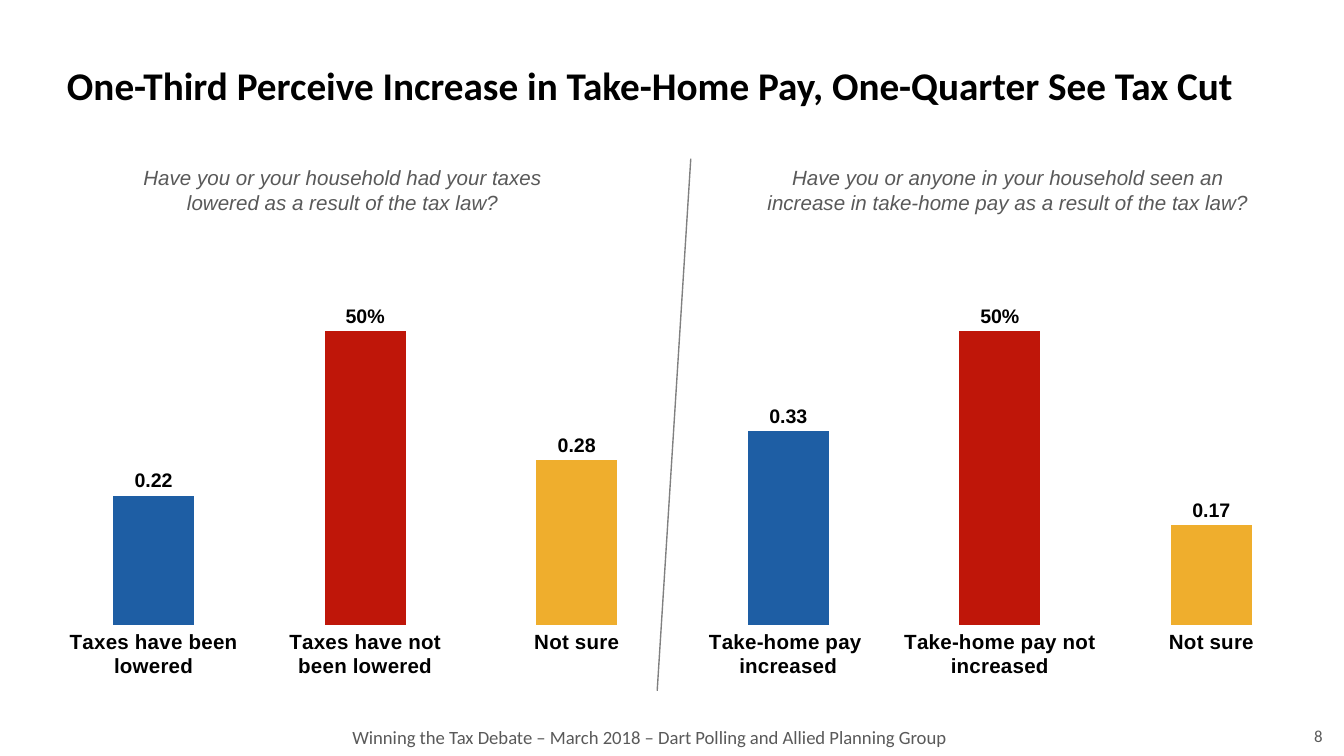
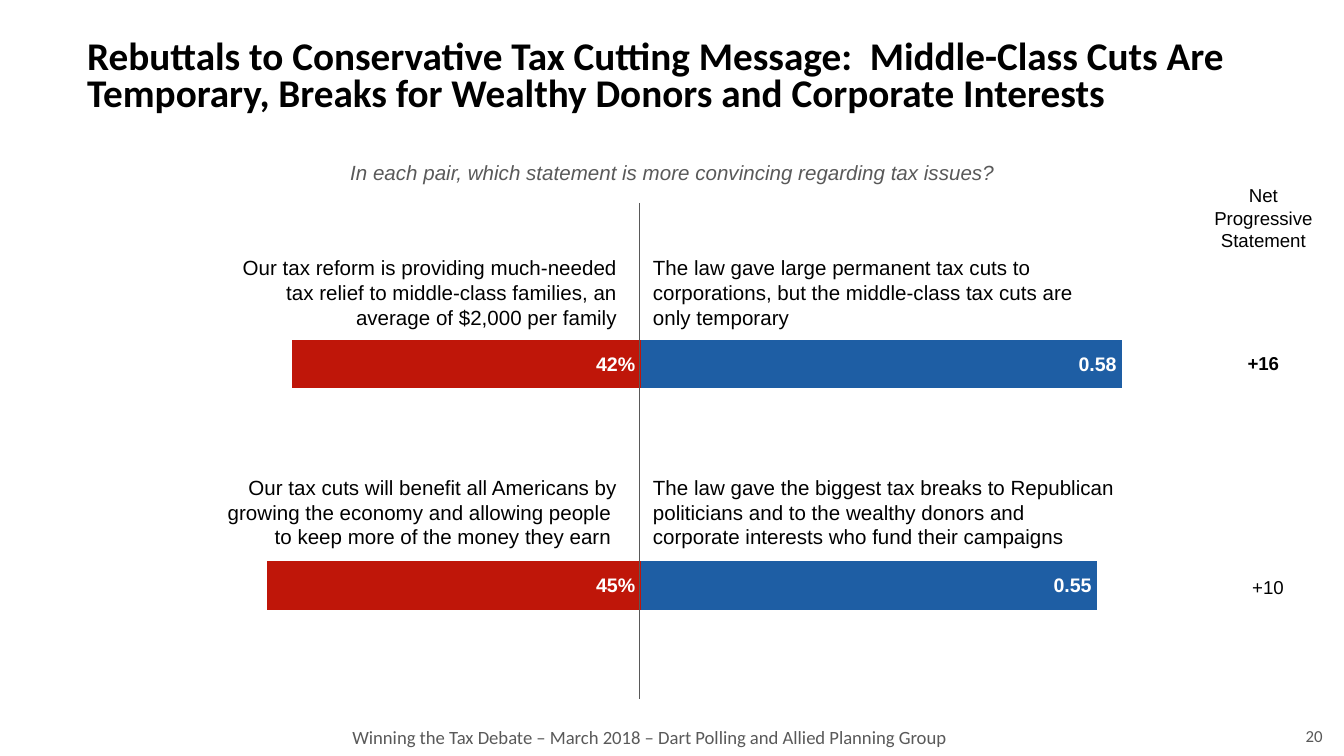
from copy import deepcopy

from pptx import Presentation
from pptx import util as u
from pptx.chart.data import CategoryChartData
from pptx.dml.color import RGBColor
from pptx.enum import chart as charts, shapes, text
from pptx.oxml import parse_xml
from pptx.oxml.ns import nsdecls, qn

BLACK, WHITE, GRAY, MID_GRAY = "000000", "FFFFFF", "595959", "808080"
BLUE, RED, GOLD = "1E5EA4", "BF1609", "EFAE2D"
LEFT, CENTER, RIGHT = text.PP_ALIGN.LEFT, text.PP_ALIGN.CENTER, text.PP_ALIGN.RIGHT
FOOTER = "Winning the Tax Debate – March 2018 – Dart Polling and Allied Planning Group"
NO_LEADERS = (
    f'<c:extLst {nsdecls("c")}><c:ext uri="{{CE6537A1-D6FC-4f65-9D91-7224C49458BB}}" '
    'xmlns:c15="http://schemas.microsoft.com/office/drawing/2012/chart">'
    '<c15:showLeaderLines val="0"/></c:ext></c:extLst>')


def rgb(color):
    return RGBColor.from_string(color)


def set_font(font, size, color=BLACK, name="Arial", bold=False, italic=False):
    font.name, font.size, font.bold, font.italic = name, u.Pt(size), bold, italic
    font.color.rgb = rgb(color)


def write(paragraph, words, align=LEFT, spacing=None, before=None, indent=None, **style):
    paragraph.alignment = align
    if spacing:
        paragraph.line_spacing = spacing
    if before:
        paragraph.space_before = u.Pt(before)
    if indent:
        paragraph._p.get_or_add_pPr().set("marL", str(u.Inches(indent)))
    for index, line in enumerate(words.split("\n")):
        if index:
            paragraph.add_line_break()
        run = paragraph.add_run()
        run.text = line
        set_font(run.font, **style)
    for line_break in paragraph._p.findall(qn("a:br")):
        line_break.append(deepcopy(run._r.rPr))


def manual_layout(x, y, w=None, h=None):
    parts = [("x", x), ("y", y)]
    if w:
        parts = [("layoutTarget", "inner"), ("xMode", "edge"), ("yMode", "edge"), *parts, ("w", w), ("h", h)]
    body = "".join(f'<c:{tag} val="{value}"/>' for tag, value in parts)
    return parse_xml(f'<c:layout {nsdecls("c")}><c:manualLayout>{body}</c:manualLayout></c:layout>')


class Deck:
    def __init__(self):
        self.show = Presentation()
        self.show.slide_width = u.Inches(10)
        self.show.slide_height = u.Inches(10) * 9 // 16
        self.slide = None

    def page(self, title, title_area, number):
        self.slide = self.show.slides.add_slide(self.show.slide_layouts[6])
        self.text((1.84, 5.35, 5.98, 0.27), [FOOTER], align=CENTER, size=10, color=GRAY, name="Calibri")
        self.text(title_area, [title], anchor=text.MSO_ANCHOR.MIDDLE, spacing=0.8,
                  size=21, name="Calibri", bold=True)
        self.text((9.3, 5.35, 0.64, 0.25), [number], align=RIGHT, size=9, color=GRAY, name="Calibri")

    def text(self, area, paragraphs, anchor=text.MSO_ANCHOR.TOP, wrap=True, **style):
        frame = self.slide.shapes.add_textbox(*map(u.Inches, area)).text_frame
        frame.word_wrap = wrap
        frame.vertical_anchor = anchor
        for index, entry in enumerate(paragraphs):
            words, extra = entry if isinstance(entry, tuple) else (entry, {})
            paragraph = frame.add_paragraph() if index else frame.paragraphs[0]
            write(paragraph, words, **{**style, **extra})

    def question(self, area, words):
        self.text(area, [words], align=CENTER, size=11, color=GRAY, italic=True)

    def line(self, start, end, color):
        divider = self.slide.shapes.add_connector(
            shapes.MSO_CONNECTOR.STRAIGHT, *map(u.Inches, (*start, *end)))
        divider.line.color.rgb = rgb(color)
        divider.line.width = u.Pt(0.75)
        divider._element.spPr.append(parse_xml(f'<a:effectLst {nsdecls("a")}/>'))

    def chart(self, kind, area, categories, series, plot_area, limits, gap, label_color):
        data = CategoryChartData()
        data.categories = categories
        for index, (values, *_) in enumerate(series, 1):
            data.add_series(f"Series {index}", values)
        chart = self.slide.shapes.add_chart(kind, *map(u.Inches, area), data).chart
        chart.has_legend = chart.has_title = False
        set_font(chart.font, 18)
        plot_xml = chart._chartSpace.chart.plotArea
        for layout in plot_xml.findall(qn("c:layout")):
            plot_xml.remove(layout)
        plot_xml.insert(0, manual_layout(*plot_area))
        scale = chart.value_axis
        scale.minimum_scale, scale.maximum_scale = limits
        scale.has_major_gridlines = scale.visible = False
        plot = chart.plots[0]
        plot.gap_width, plot.overlap, plot.vary_by_categories = gap, 100, False
        for bars, (_, color, number_format, position) in zip(plot.series, series):
            bars.format.fill.solid()
            bars.format.fill.fore_color.rgb = rgb(color)
            bars.invert_if_negative = False
            labels = bars.data_labels
            labels.show_value = True
            labels.number_format, labels.number_format_is_linked = number_format, False
            labels.position = position
            set_font(labels.font, 10.5, label_color, bold=True)
        return chart

    def raise_labels(self, chart, series, plot_height, top):
        for bars, (values, _, number_format, position) in zip(chart.plots[0].series, series):
            for index, value in enumerate(values):
                if value is None:
                    continue
                label = bars.points[index].data_label
                set_font(label.font, 10.5, bold=True)
                label.position = position
                shift = round(-value / top * plot_height / 2 - 0.03, 3)
                label_xml = bars._element.xpath(f"c:dLbls/c:dLbl[c:idx/@val={index}]")[0]
                label_xml.insert(1, manual_layout(0, shift))
                label_xml.insert(2, parse_xml(
                    f'<c:numFmt {nsdecls("c")} formatCode="{number_format}" sourceLinked="0"/>'))
            labels_xml = bars._element.find(qn("c:dLbls"))
            for leaders in labels_xml.findall(qn("c:showLeaderLines")):
                leaders.set("val", "0")
            labels_xml.append(parse_xml(NO_LEADERS))


def perceptions(deck):
    deck.page("One-Third Perceive Increase in Take-Home Pay, One-Quarter See Tax Cut",
              (0.4, 0.23, 9.21, 0.87), "8")
    middle = charts.XL_LABEL_POSITION.CENTER
    answers = [
        ((0.22, None, None, 0.33, None, None), BLUE, "General", middle),
        ((None, 0.5, None, None, 0.5, None), RED, "0%", middle),
        ((None, None, 0.28, None, None, 0.17), GOLD, "General", middle),
    ]
    top, plot_height = 0.7, 0.827
    columns = deck.chart(
        charts.XL_CHART_TYPE.COLUMN_STACKED, (0.3, 1.44, 9.53, 3.7),
        ["Taxes have been lowered", "Taxes have not been lowered", "Not sure",
         "Take-home pay  increased", "Take-home pay not increased", "Not sure"],
        answers, (0.006, 0.041, 0.991, plot_height), (0, top), 161, BLACK)
    deck.raise_labels(columns, answers, plot_height, top)
    axis = columns.category_axis
    axis.major_tick_mark = axis.minor_tick_mark = charts.XL_TICK_MARK.NONE
    axis.format.line.fill.background()
    set_font(axis.tick_labels.font, 11, bold=True)
    deck.question((0.91, 1.18, 3.28, 0.47),
                  "Have you or your household had your taxes lowered as a result of the tax law?")
    deck.line((5.14, 1.18), (4.89, 5.14), MID_GRAY)
    deck.question((5.56, 1.18, 3.88, 0.47),
                  "Have you or anyone in your household seen an increase in take-home pay "
                  "as a result of the tax law?")


def rebuttals(deck):
    deck.page("Rebuttals to Conservative Tax Cutting Message:  Middle-Class Cuts Are Temporary, "
              "Breaks for Wealthy Donors and Corporate Interests", (0.55, 0.11, 8.85, 0.94), "20")
    position = charts.XL_LABEL_POSITION
    sides = [
        ((-0.45, None, -0.42), RED, "#%;#%;0", position.INSIDE_BASE),
        ((0.55, None, 0.58), BLUE, "General", position.INSIDE_END),
    ]
    bars = deck.chart(charts.XL_CHART_TYPE.BAR_STACKED, (0.91, 2.21, 8.95, 2.56), ["1", "2", "3"],
                      sides, (0.017, 0.035, 0.966, 0.965), (-0.6, 0.8), 129, WHITE)
    bars.category_axis.visible = False
    deck.question((1.14, 1.14, 7.73, 0.29),
                  "In each pair, which statement is more convincing regarding tax issues?")
    second = {"before": 78}
    deck.text((4.76, 1.85, 3.64, 2.31), [
        "The law gave large permanent tax cuts to corporations, but the middle-class tax cuts "
        "are only temporary",
        ("The law gave the biggest tax breaks to Republican politicians and to the wealthy donors "
         "and corporate interests who fund their campaigns", second),
    ], size=11)
    deck.text((1.54, 1.85, 3.15, 2.31), [
        "Our tax reform is providing much-needed tax relief to middle-class families, "
        "an average of $2,000 per family",
        ("Our tax cuts will benefit all Americans by growing the economy and allowing people \n"
         "to keep more of the money they earn ", second),
    ], align=RIGHT, size=11)
    deck.line((4.76, 1.51), (4.76, 5.2), GRAY)
    deck.text((8.93, 1.32, 0.94, 3.21), [
        "Net\nProgressive\nStatement",
        ("+16", {"before": 54, "bold": True}),
        ("+10", {"before": 108, "indent": 0.07}),
    ], wrap=False, align=CENTER, size=10)


def main():
    deck = Deck()
    perceptions(deck)
    rebuttals(deck)
    deck.show.save("out.pptx")


if __name__ == "__main__":
    main()
